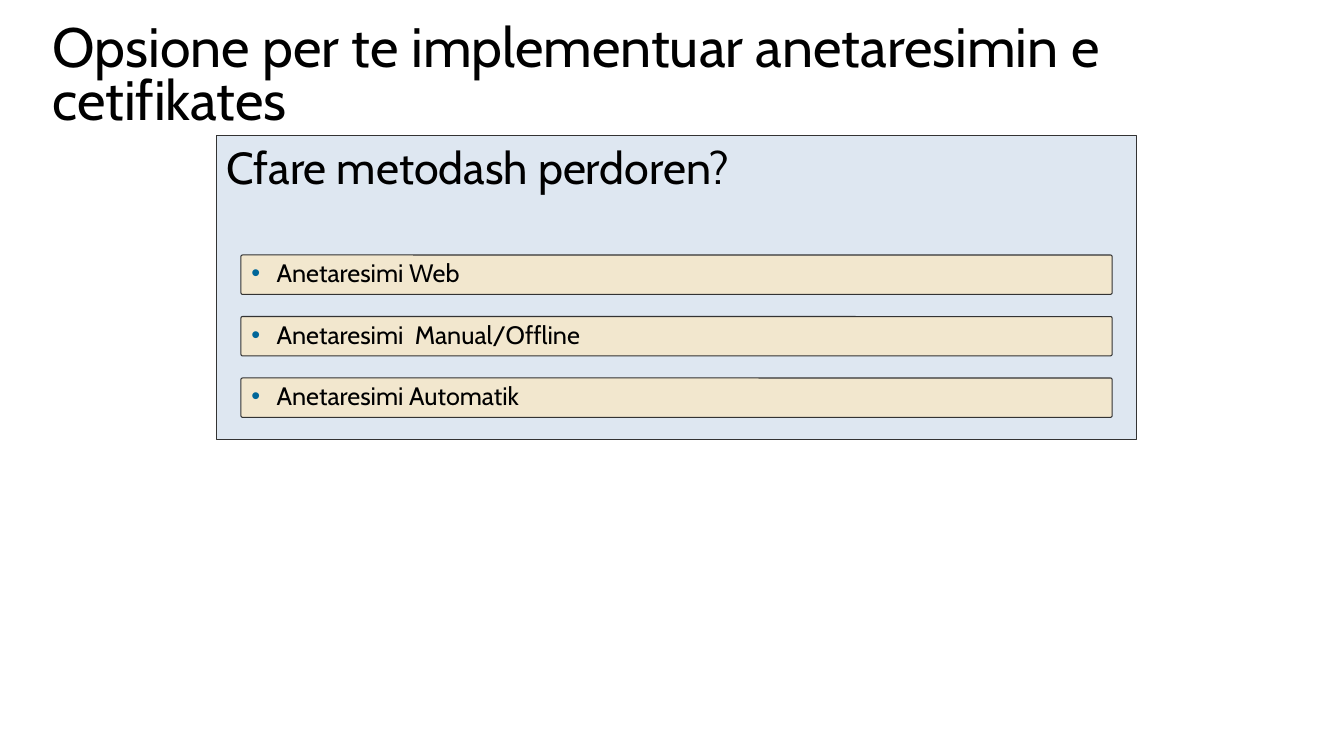
from dataclasses import dataclass

from lxml.etree import SubElement
from pptx import Presentation
from pptx.dml.color import RGBColor
from pptx.enum.shapes import MSO_SHAPE
from pptx.enum.text import MSO_ANCHOR, PP_ALIGN
from pptx.oxml.ns import qn
from pptx.util import Pt

PX = 9144


@dataclass(frozen=True)
class Theme:
    font: str = "Cabin"
    ink: str = "000000"
    outline: str = "333333"
    panel: str = "DEE7F1"
    option: str = "F2E7CE"
    bullet: str = "006699"
    title_size: float = 39.6
    question_size: float = 32
    option_size: float = 18


THEME = Theme()


def px(*lengths):
    return [length * PX for length in lengths]


def write_text(shape, text, size, anchor=MSO_ANCHOR.TOP, line_spacing=1.0):
    frame = shape.text_frame
    frame.word_wrap = True
    frame.vertical_anchor = anchor
    frame.margin_left = frame.margin_right = 10 * PX
    frame.margin_top = frame.margin_bottom = 5 * PX
    paragraph = frame.paragraphs[0]
    paragraph.text = text
    paragraph.alignment = PP_ALIGN.LEFT
    paragraph.line_spacing = line_spacing
    paragraph.font.name = THEME.font
    paragraph.font.size = Pt(size)
    paragraph.font.color.rgb = RGBColor.from_string(THEME.ink)
    return paragraph


def add_bullet(paragraph, indent):
    properties = paragraph._p.get_or_add_pPr()
    properties.set("marL", str(indent * PX))
    properties.set("indent", str(-indent * PX))
    color = SubElement(properties, qn("a:buClr"))
    SubElement(color, qn("a:srgbClr"), val=THEME.bullet)
    SubElement(properties, qn("a:buFont"), typeface="Arial")
    SubElement(properties, qn("a:buChar"), char="•")


def add_box(slide, kind, bounds, fill):
    shape = slide.shapes.add_shape(kind, *px(*bounds))
    shape.shadow.inherit = False
    shape.fill.solid()
    shape.fill.fore_color.rgb = RGBColor.from_string(fill)
    shape.line.color.rgb = RGBColor.from_string(THEME.outline)
    shape.line.width = Pt(0.75)
    return shape


def add_title(slide, text):
    title = slide.shapes.add_textbox(*px(42, 20, 1260, 116))
    write_text(title, text, THEME.title_size, line_spacing=0.8)


def add_question(slide, text):
    panel = add_box(slide, MSO_SHAPE.RECTANGLE, (215, 134, 912, 302), THEME.panel)
    write_text(panel, text, THEME.question_size)


def add_option(slide, text, top):
    option = add_box(slide, MSO_SHAPE.ROUNDED_RECTANGLE, (239, top, 864, 39), THEME.option)
    option.adjustments[0] = 0.04
    paragraph = write_text(option, text, THEME.option_size, MSO_ANCHOR.MIDDLE, 0.9)
    add_bullet(paragraph, 25)


def main():
    """Build the slide on the options for certificate enrolment."""
    presentation = Presentation()
    presentation.slide_width, presentation.slide_height = px(1333, 750)
    slide = presentation.slides.add_slide(presentation.slide_layouts[6])
    add_title(slide, "Opsione per te implementuar anetaresimin e cetifikates")
    add_question(slide, "Cfare metodash perdoren?")
    options = ("Anetaresimi Web", "Anetaresimi  Manual/Offline", "Anetaresimi Automatik")
    for index, text in enumerate(options):
        add_option(slide, text, 253 + 61 * index)
    presentation.save("out.pptx")


if __name__ == "__main__":
    main()
